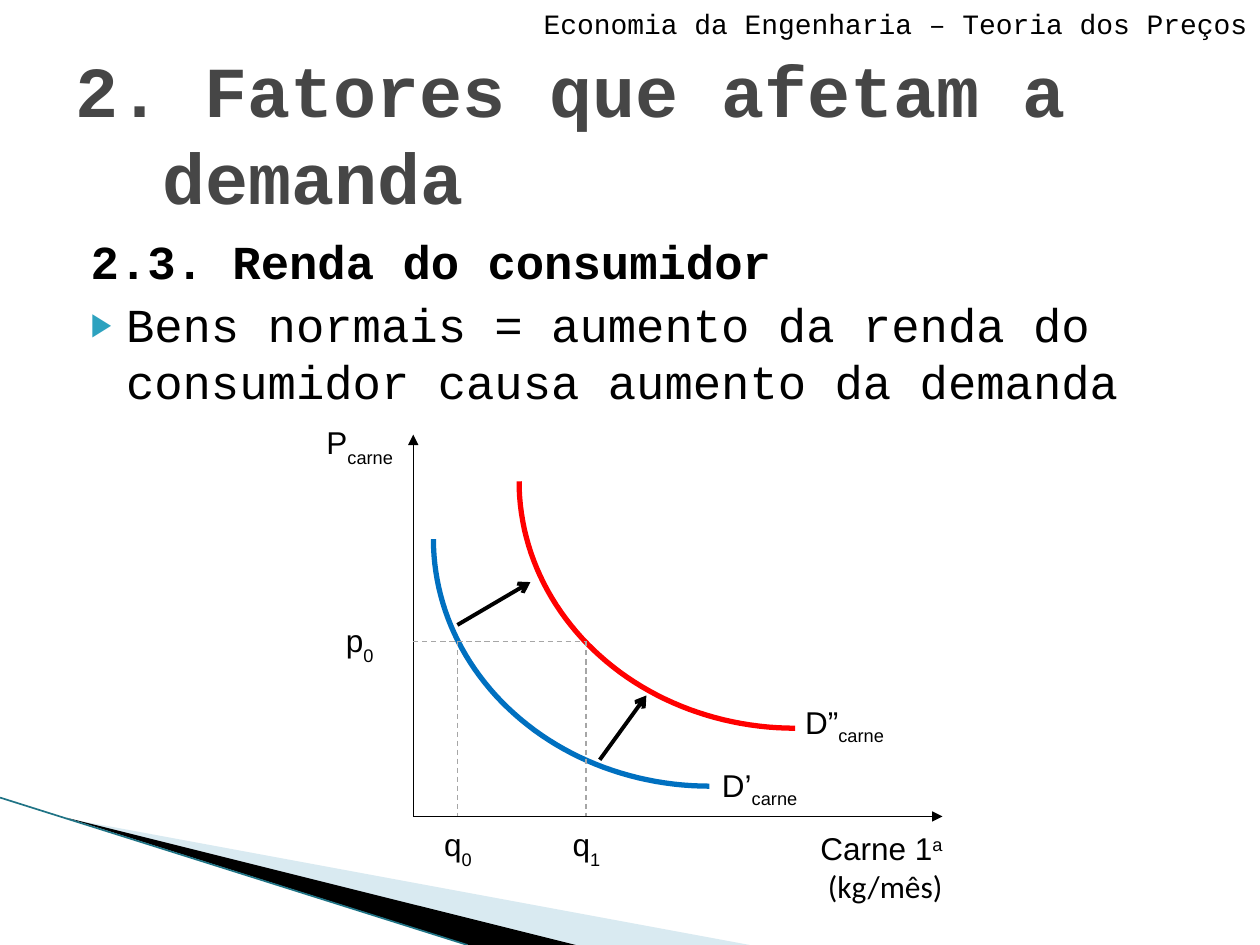
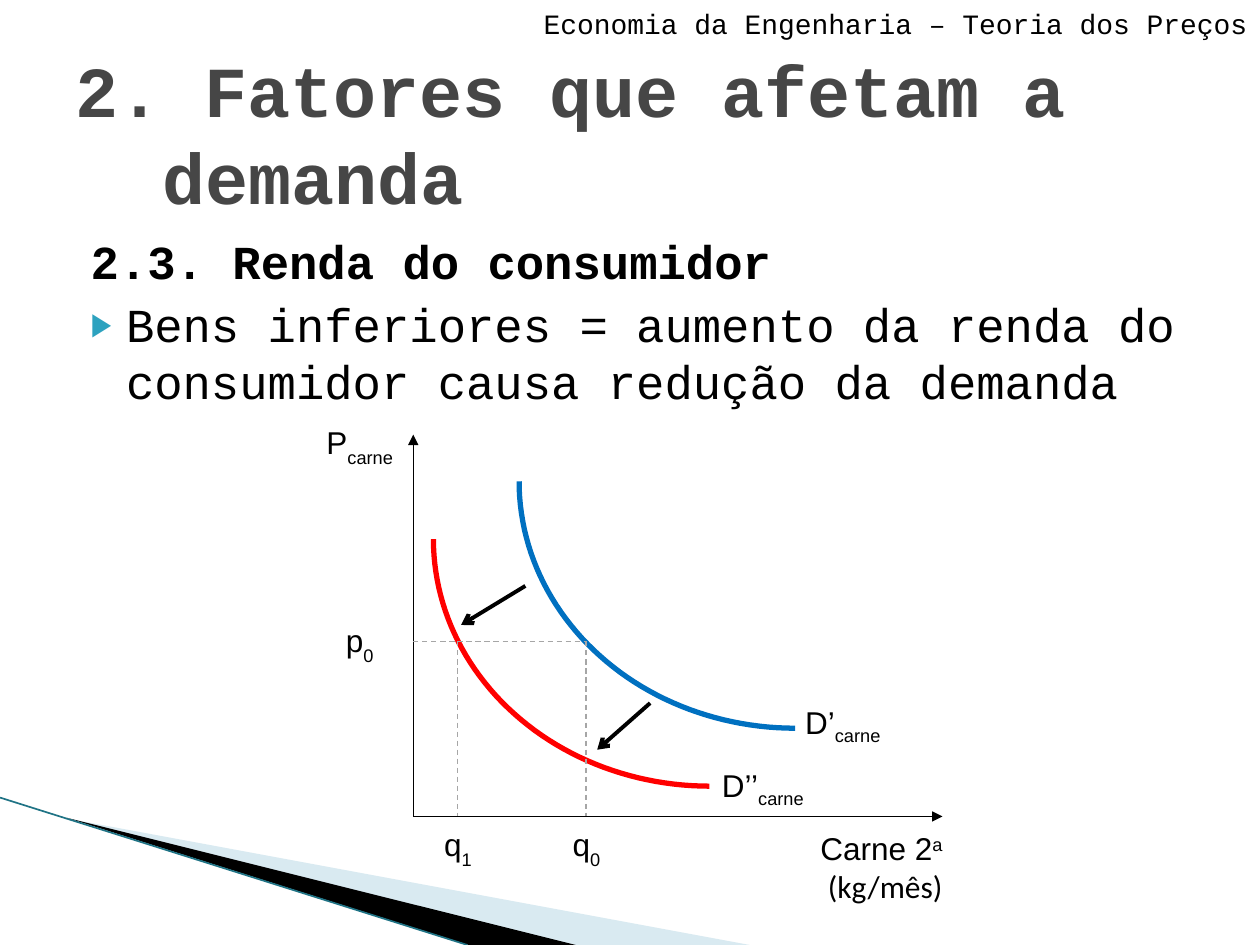
from dataclasses import dataclass
from math import cos, sin, pi

from lxml.etree import SubElement
from pptx import Presentation
from pptx.dml.color import RGBColor as RGB
from pptx.enum.dml import MSO_LINE_DASH_STYLE as Dash
from pptx.enum.shapes import MSO_CONNECTOR as Connector
from pptx.enum.text import MSO_ANCHOR as Anchor, MSO_AUTO_SIZE as AutoSize, PP_ALIGN as Align
from pptx.oxml.ns import qn
from pptx.util import Inches, Pt


@dataclass(frozen=True)
class Theme:
    black: str = "000000"
    white: str = "FFFFFF"
    title: str = "464646"
    bullet: str = "2DA2BF"
    pale_band: str = "A0CBDC"
    band_edge: str = "1F7385"
    guide: str = "A6A6A6"
    before: str = "0070C0"
    after: str = "FF0000"
    mono: str = "Courier New"
    sans: str = "Arial"
    unit_font: str = "Calibri"
    title_size: int = 41
    body_size: int = 27
    label_size: int = 18
    header_size: int = 16


T = Theme()
ORIGIN = (3.28, 6.48)
PRICE = 5.09
Q_LOW, Q_HIGH = 3.63, 4.65
CURVE_W, CURVE_H = 2.19, 1.96
SUB, SUPER = -30, 30
CURVE_SUB = -25


class Deck:
    def __init__(self):
        self.prs = Presentation()
        self.prs.slide_width, self.prs.slide_height = Inches(10), Inches(7.5)
        self.layout = self.prs.slide_layouts[1]
        self.s = None

    def new_slide(self):
        self.s = self.prs.slides.add_slide(self.layout)
        if len(self.prs.slides) == 1:
            self.bands()

    def bands(self):
        pale = self.outline([(0.55, 6.5), (5.95, 7.5), (4.56, 7.5)], fill=T.pale_band)
        color = pale._element.spPr.find(qn("a:solidFill"))[0]
        SubElement(color, qn("a:alpha"), val="40000")
        dark = self.outline([(0.53, 6.49), (4.57, 7.5), (3.72, 7.5)], fill=T.black)
        edge = self.line((0, 6.33), (3.71, 7.5), T.band_edge, 0.95)
        for number, shape in enumerate((pale, dark, edge), 101):
            shape._element.xpath(".//p:cNvPr")[0].set("id", str(number))
            self.layout.shapes._spTree.append(shape._element)

    def run(self, p, text, size, font=T.mono, color=T.black, bold=False, base=0):
        r = p.add_run()
        r.text = text
        r.font.name, r.font.size, r.font.bold = font, Pt(size), bold
        r.font.color.rgb = RGB.from_string(color)
        if base:
            r._r.get_or_add_rPr().set("baseline", str(base * 1000))

    def indent(self, p, left, first):
        pPr = p._p.get_or_add_pPr()
        pPr.set("marL", str(Inches(left)))
        pPr.set("indent", str(Inches(first)))
        return pPr

    def place(self, shape, left, top, width, height, anchor):
        shape.left, shape.top = Inches(left), Inches(top)
        shape.width, shape.height = Inches(width), Inches(height)
        tf = shape.text_frame
        tf.word_wrap, tf.auto_size = True, AutoSize.NONE
        tf.vertical_anchor = anchor
        return tf

    def title(self, text):
        p = self.place(self.s.shapes.title, 0.5, 0.3, 9, 1.5, Anchor.MIDDLE).paragraphs[0]
        p.alignment = Align.LEFT
        self.indent(p, 0.69, -0.69)
        self.run(p, text, T.title_size, color=T.title, bold=True)

    def body(self, heading, bullet):
        tf = self.place(self.s.placeholders[1], 0.5, 1.79, 9, 1.56, Anchor.TOP)
        p = tf.paragraphs[0]
        p.space_before = Pt(0)
        SubElement(self.indent(p, 0.12, 0), qn("a:buNone"))
        self.run(p, heading, T.body_size, bold=True)
        p = tf.add_paragraph()
        p.space_before = Pt(4)
        pPr = self.indent(p, 0.4, -0.28)
        SubElement(SubElement(pPr, qn("a:buClr")), qn("a:srgbClr"), val=T.bullet)
        SubElement(pPr, qn("a:buSzPct"), val="68000")
        SubElement(pPr, qn("a:buFont"), typeface=T.sans)
        SubElement(pPr, qn("a:buChar"), char="▶")
        self.run(p, bullet, T.body_size)

    def header(self, text):
        box = self.s.shapes.add_textbox(0, 0, Inches(10), Inches(0.35))
        box.text_frame.word_wrap = True
        p = box.text_frame.paragraphs[0]
        p.alignment = Align.RIGHT
        self.run(p, text, T.header_size)

    def label(self, box, text, script, base=SUB, align=Align.CENTER, unit=None):
        shape = self.s.shapes.add_textbox(*map(Inches, box))
        shape.fill.solid()
        shape.fill.fore_color.rgb = RGB.from_string(T.white)
        tf = shape.text_frame
        tf.word_wrap = True
        tf.margin_left = tf.margin_right = tf.margin_top = tf.margin_bottom = 0
        p = tf.paragraphs[0]
        p.alignment = align
        self.run(p, text, T.label_size, T.sans)
        self.run(p, script, T.label_size, T.sans, base=base)
        if unit:
            p = tf.add_paragraph()
            p.alignment = align
            self.run(p, unit, T.label_size, T.unit_font)

    def line(self, start, end, color, width, dash=None, arrow=None):
        c = self.s.shapes.add_connector(Connector.STRAIGHT, *map(Inches, start + end))
        c.line.color.rgb = RGB.from_string(color)
        c.line.width = Pt(width)
        if dash:
            c.line.dash_style = dash
        if arrow:
            SubElement(c.line._get_or_add_ln(), qn("a:tailEnd"), type=arrow)
        SubElement(c._element.spPr, qn("a:effectLst"))
        return c

    def outline(self, points, fill=None, stroke=None):
        points = [(Inches(x), Inches(y)) for x, y in points]
        builder = self.s.shapes.build_freeform(*points[0])
        builder.add_line_segments(points[1:], close=fill is not None)
        shape = builder.convert_to_shape()
        shape.shadow.inherit = False
        if fill:
            shape.fill.solid()
            shape.fill.fore_color.rgb = RGB.from_string(fill)
            shape.line.fill.background()
        else:
            shape.fill.background()
            shape.line.color.rgb = RGB.from_string(stroke)
            shape.line.width = Pt(3)
        return shape

    def curve(self, left, top, color, name, label_box):
        steps = 48
        angles = [pi / 2 * i / steps for i in range(steps + 1)]
        self.outline([(left + CURVE_W * (1 - cos(a)), top + CURVE_H * sin(a)) for a in angles],
                     stroke=color)
        self.label(label_box, name, "carne", CURVE_SUB, Align.LEFT)

    def axes(self, good):
        self.label((5.59, 6.58, 1.89, 0.71), good, "a", SUPER, Align.RIGHT, "(kg/mês)")
        self.label((2.48, 3.36, 0.75, 0.37), "P", "carne")
        for tip in ((7.48, ORIGIN[1]), (ORIGIN[0], 3.45)):
            self.line(ORIGIN, tip, T.black, 0.75, arrow="triangle")

    def guides(self, low, high):
        self.label((2.67, 4.93, 0.37, 0.32), "p", "0")
        for left, x, index in ((ORIGIN[0], Q_LOW, low), (Q_LOW, Q_HIGH, high)):
            self.label((x - 0.18, 6.55, 0.37, 0.32), "q", index)
            self.line((left, PRICE), (x, PRICE), T.guide, 0.75, Dash.DASH)
            self.line((x, PRICE), (x, ORIGIN[1]), T.guide, 0.75, Dash.DASH)

    def demand_slide(self, bullet, good, inner, outer, quantities, shifts):
        self.new_slide()
        self.body("2.3. Renda do consumidor", bullet)
        self.title("2. Fatores que afetam a demanda")
        self.header("Economia da Engenharia – Teoria dos Preços")
        self.curve(3.44, 4.28, *inner, (5.73, 6.08, 1.25, 0.32))
        self.curve(4.12, 3.82, *outer, (6.39, 5.58, 1.16, 0.32))
        self.axes(good)
        self.guides(*quantities)
        for start, end in shifts:
            self.line(start, end, T.black, 2.25, arrow="arrow")


def main():
    deck = Deck()
    deck.demand_slide(
        "Bens normais = aumento da renda do consumidor causa aumento da demanda",
        "Carne 1", (T.before, "D’"), (T.after, "D”"), "01",
        [((3.63, 4.96), (4.21, 4.62)), ((4.76, 6.03), (5.13, 5.52))])
    deck.demand_slide(
        "Bens inferiores = aumento da renda do consumidor causa redução da demanda",
        "Carne 2", (T.after, "D’’"), (T.before, "D’"), "10",
        [((4.17, 4.65), (3.66, 4.96)), ((5.16, 5.58), (4.74, 5.95))])
    deck.prs.save("out.pptx")


if __name__ == "__main__":
    main()
